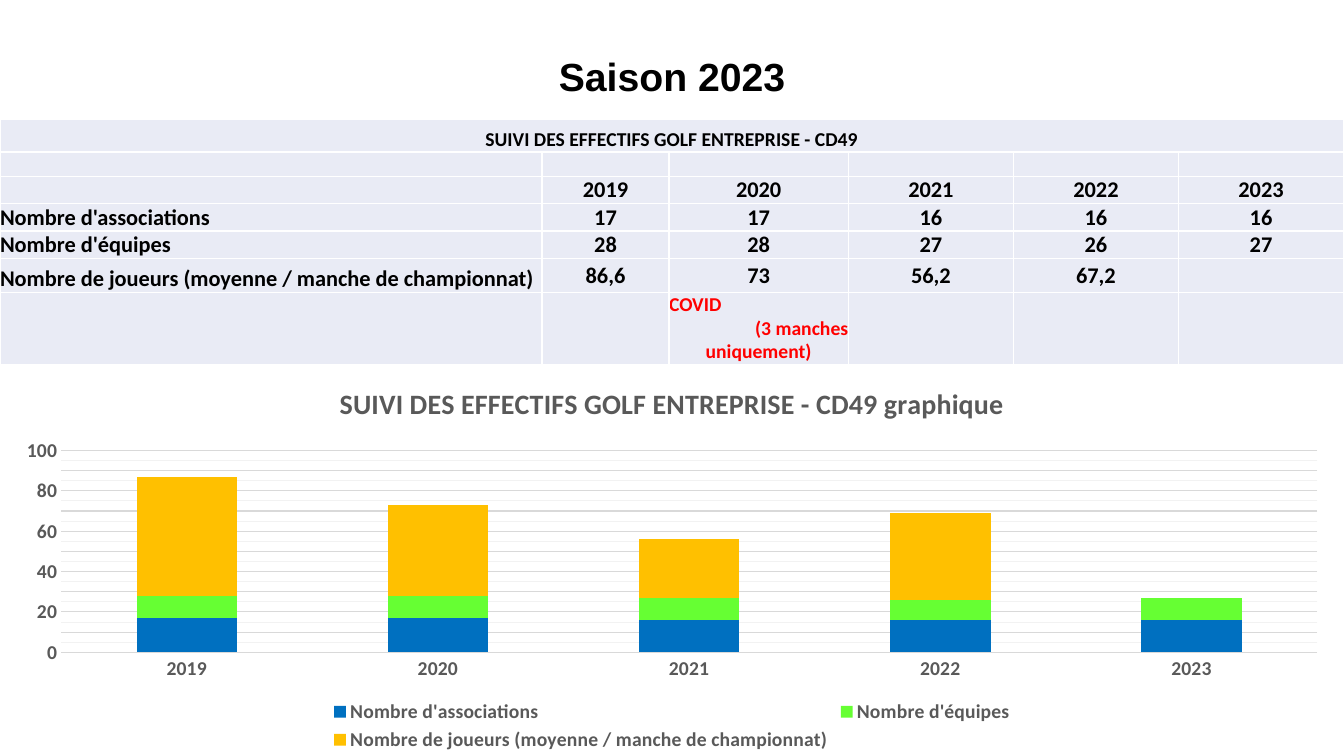
from dataclasses import dataclass

from lxml import etree
from pptx import Presentation
from pptx.chart.data import CategoryChartData
from pptx.dml.color import RGBColor
from pptx.enum.chart import XL_CHART_TYPE, XL_LEGEND_POSITION, XL_TICK_MARK
from pptx.enum.text import MSO_ANCHOR, PP_ALIGN
from pptx.oxml.ns import qn
from pptx.util import Cm, Pt

STACKED = XL_CHART_TYPE.COLUMN_STACKED
LEGEND_BOTTOM = XL_LEGEND_POSITION.BOTTOM
NO_TICK = XL_TICK_MARK.NONE
MIDDLE, BOTTOM = MSO_ANCHOR.MIDDLE, MSO_ANCHOR.BOTTOM
LEFT, CENTER, RIGHT = PP_ALIGN.LEFT, PP_ALIGN.CENTER, PP_ALIGN.RIGHT


@dataclass(frozen=True)
class Theme:
    heading_font: str = "Arial"
    body_font: str = "Calibri"
    ink: str = "000000"
    alert: str = "FF0000"
    cell: str = "E9EBF5"
    border: str = "FFFFFF"
    chart_text: str = "595959"
    grid: str = "D9D9D9"
    minor_grid: str = "F2F2F2"
    series: tuple = ("0070C0", "66FF33", "FFC000")
    heading_size: float = 28
    chart_title_size: float = 20
    figure_size: float = 16
    small_size: float = 14


THEME = Theme()


def style_font(font, size, color, name=THEME.body_font):
    font.name, font.size, font.bold = name, Pt(size), True
    font.color.rgb = RGBColor.from_string(color)


def add_line_xml(parent, tag, color, width):
    line = etree.Element(qn(tag), w=str(Pt(width)))
    paint = etree.SubElement(line, qn("a:solidFill"))
    etree.SubElement(paint, qn("a:srgbClr"), val=color)
    # Lines precede any fill already in the parent
    parent.insert(len(parent.findall("*")) - len(parent.findall(qn("a:solidFill"))), line)


prs = Presentation()
prs.slide_width, prs.slide_height = Cm(33.87), Cm(19.05)
slide = prs.slides.add_slide(prs.slide_layouts[5])

# Title
season = slide.shapes.title
season.left, season.top, season.width, season.height = Cm(2.33), Cm(0.9), Cm(29.21), Cm(2)
season.text_frame.text = "Saison 2023"
season.text_frame.vertical_anchor = MIDDLE
season_line = season.text_frame.paragraphs[0]
season_line.alignment = CENTER
style_font(season_line.runs[0].font, THEME.heading_size, THEME.ink, THEME.heading_font)

# Table of members
years = ["2019", "2020", "2021", "2022", "2023"]
measures = ["Nombre d'associations", "Nombre d'équipes",
            "Nombre de joueurs (moyenne / manche de championnat)"]
covid_lines = {"COVID": LEFT, "(3 manches": RIGHT, "uniquement)": CENTER}
rows = [
    ["SUIVI DES EFFECTIFS GOLF ENTREPRISE - CD49"] + [""] * 5,
    [""] * 6,
    [""] + years,
    [measures[0], "17", "17", "16", "16", "16"],
    [measures[1], "28", "28", "27", "26", "27"],
    [measures[2], "86,6", "73", "56,2", "67,2", ""],
    ["", "", "\n".join(covid_lines), "", "", ""],
]
column_widths = [13.66, 3.2, 4.52, 4.16, 4.16, 4.16]
row_heights = [0.81, 0.61, 0.69, 0.69, 0.69, 0.86, 1.79]
CAPTION_ROW, PLAYERS_ROW, COVID_ROW = 0, 5, 6

members = slide.shapes.add_table(len(rows), len(column_widths), Cm(0), Cm(3.02),
                                 Cm(sum(column_widths)), Cm(sum(row_heights))).table
for column, width in zip(members.columns, column_widths):
    column.width = Cm(width)
for row, height in zip(members.rows, row_heights):
    row.height = Cm(height)
members.cell(0, 0).merge(members.cell(0, 5))

for r, values in enumerate(rows):
    for c, value in enumerate(values):
        cell = members.cell(r, c)
        cell.margin_left = cell.margin_right = cell.margin_top = cell.margin_bottom = 0
        centred_row = r == COVID_ROW or (r == PLAYERS_ROW and c > 0)
        cell.vertical_anchor = MIDDLE if centred_row else BOTTOM
        cell.fill.solid()
        cell.fill.fore_color.rgb = RGBColor.from_string(THEME.cell)
        cell.text_frame.text = value
        size = THEME.small_size if r in (CAPTION_ROW, COVID_ROW) else THEME.figure_size
        color = THEME.alert if r == COVID_ROW else THEME.ink
        for paragraph in cell.text_frame.paragraphs:
            default = LEFT if c == 0 and r != CAPTION_ROW else CENTER
            paragraph.alignment = covid_lines.get(paragraph.text, default)
            for run in paragraph.runs:
                style_font(run.font, size, color)
            if not value:
                # Keeps empty rows as low as the text size allows
                etree.SubElement(paragraph._p, qn("a:endParaRPr"),
                                 sz=str(THEME.small_size * 100))
        for side in ("a:lnL", "a:lnR", "a:lnT", "a:lnB"):
            add_line_xml(cell._tc.get_or_add_tcPr(), side, THEME.border, 1)

# Stacked column chart
increments = [(17, 17, 16, 16, 16), (11, 11, 11, 10, 11), (59, 45, 29, 43, None)]
chart_data = CategoryChartData()
chart_data.categories = years
for measure, values in zip(measures, increments):
    chart_data.add_series(measure, values)
chart = slide.shapes.add_chart(STACKED, Cm(0), Cm(9.22), Cm(33.87), Cm(9.83), chart_data).chart
style_font(chart.font, THEME.small_size, THEME.chart_text)

chart.has_title = True
chart.chart_title.text_frame.text = "SUIVI DES EFFECTIFS GOLF ENTREPRISE - CD49 graphique"
style_font(chart.chart_title.text_frame.paragraphs[0].runs[0].font,
           THEME.chart_title_size, THEME.chart_text)
chart.chart_title.include_in_layout = False

chart.has_legend = True
chart.legend.position = LEGEND_BOTTOM
chart.legend.include_in_layout = False
style_font(chart.legend.font, THEME.small_size, THEME.chart_text)

columns = chart.plots[0]
columns.gap_width, columns.overlap = 150, 100
columns.vary_by_categories = False
for series, color in zip(columns.series, THEME.series):
    series.format.fill.solid()
    series.format.fill.fore_color.rgb = RGBColor.from_string(color)

# Axes and gridlines
years_axis, counts = chart.category_axis, chart.value_axis
for axis in (years_axis, counts):
    axis.major_tick_mark = axis.minor_tick_mark = NO_TICK
    style_font(axis.tick_labels.font, THEME.small_size, THEME.chart_text)
counts.format.line.fill.background()
counts.minimum_scale, counts.maximum_scale = 0, 100
counts.major_unit, counts.minor_unit = 10, 5
counts.has_major_gridlines = counts.has_minor_gridlines = True
for line in (years_axis.format.line, counts.major_gridlines.format.line):
    line.color.rgb = RGBColor.from_string(THEME.grid)
    line.width = Pt(0.75)
minor_gridlines = counts._element.find(qn("c:minorGridlines"))
add_line_xml(etree.SubElement(minor_gridlines, qn("c:spPr")), "a:ln", THEME.minor_grid, 0.75)

prs.save("out.pptx")
